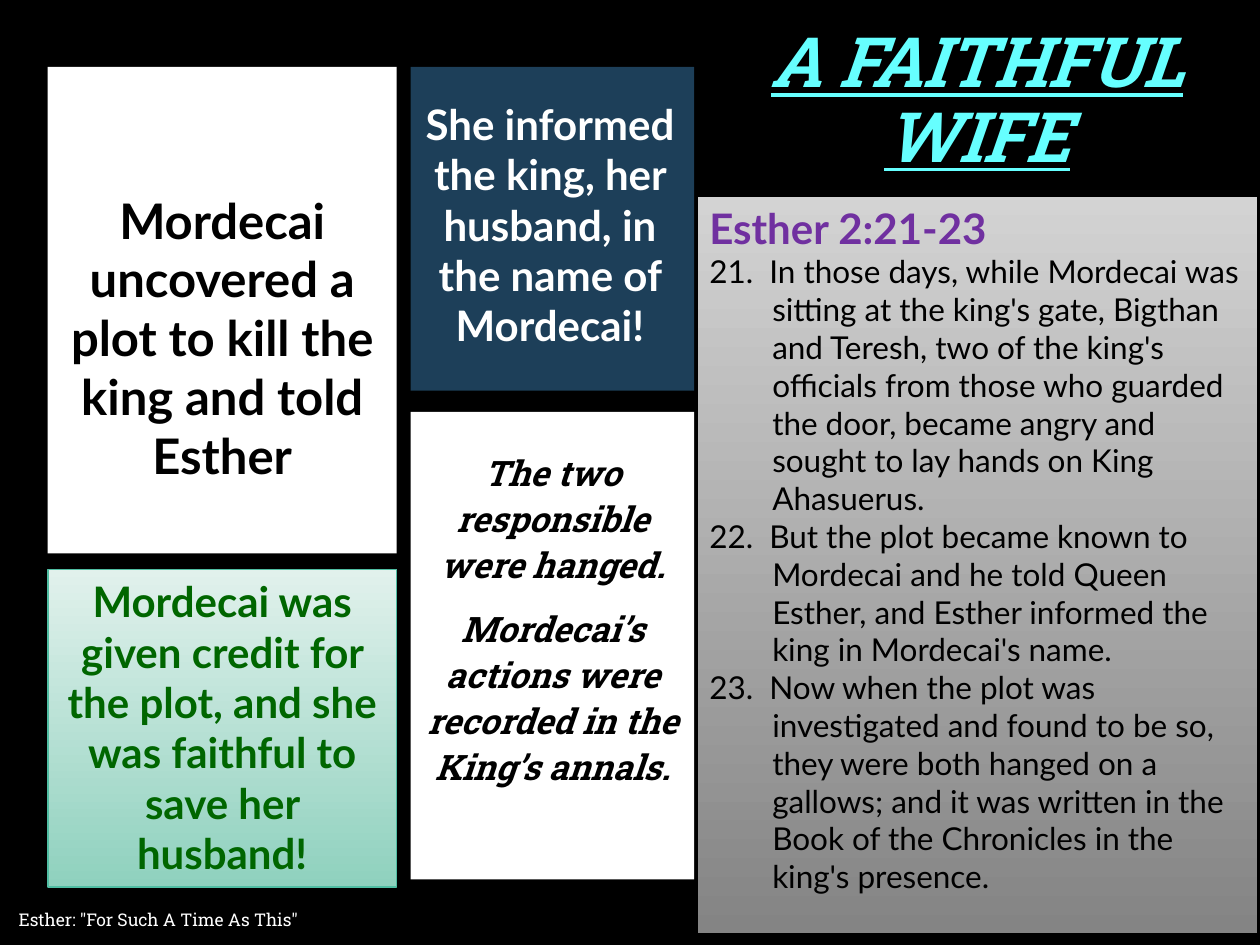
from lxml import etree
from pptx import Presentation
from pptx.dml.color import RGBColor
from pptx.enum.shapes import MSO_SHAPE
from pptx.enum.text import MSO_ANCHOR, MSO_AUTO_SIZE, PP_ALIGN
from pptx.oxml.ns import qn
from pptx.util import Pt

RECTANGLE = MSO_SHAPE.RECTANGLE
CENTER, LEFT = PP_ALIGN.CENTER, PP_ALIGN.LEFT
TOP, MIDDLE, BOTTOM = MSO_ANCHOR.TOP, MSO_ANCHOR.MIDDLE, MSO_ANCHOR.BOTTOM
GROW, FIXED = MSO_AUTO_SIZE.SHAPE_TO_FIT_TEXT, MSO_AUTO_SIZE.NONE

BLACK = RGBColor(0x00, 0x00, 0x00)
WHITE = RGBColor(0xFF, 0xFF, 0xFF)
CYAN = RGBColor(0x66, 0xFF, 0xFF)
BLUE = RGBColor(0x00, 0x00, 0xFF)
STEEL = RGBColor(0x2A, 0x5B, 0x7F)
NAVY = RGBColor(0x1F, 0x44, 0x5F)
PURPLE = RGBColor(0x70, 0x30, 0xA0)
GREEN = RGBColor(0x00, 0x66, 0x00)
TEAL = RGBColor(0x50, 0xBE, 0xA3)
MINT = (RGBColor(0xE1, 0xF1, 0xEC), RGBColor(0x8F, 0xD1, 0xBE))
GREY = (RGBColor(0xD3, 0xD3, 0xD3), RGBColor(0x84, 0x84, 0x84))

SANS, SLAB = "Lato", "Roboto Slab"

# Columns of the panel grid: left edge and width
LEFT_X, LEFT_WIDTH = 27.3, 199.4
MIDDLE_X, MIDDLE_WIDTH = 234.7, 162
PANEL_TOP = 38.2

VERSES = [
    "21.  In those days, while Mordecai was sitting at the king's gate, "
    "Bigthan and Teresh, two of the king's officials from those who guarded "
    "the door, became angry and sought to lay hands on King Ahasuerus.",
    "22.  But the plot became known to Mordecai and he told Queen Esther, "
    "and Esther informed the king in Mordecai's name.",
    "23.  Now when the plot was investigated and found to be so, they were "
    "both hanged on a gallows; and it was written in the Book of the "
    "Chronicles in the king's presence.",
]


def place(shape, left, top, width, height):
    shape.left, shape.top = Pt(left), Pt(top)
    shape.width, shape.height = Pt(width), Pt(height)


def prepare_frame(shape, anchor=TOP, auto_size=FIXED):
    frame = shape.text_frame
    frame.word_wrap = True
    frame.auto_size = auto_size
    frame.vertical_anchor = anchor
    return frame


def add_paragraph(frame, text, size, font_name, color, bold=False, italic=False,
                  align=CENTER, line_spacing=1.0, before=0, after=0, hanging=0):
    """Fill the empty first paragraph, or append one, and return its run."""
    paragraph = frame.paragraphs[0]
    if paragraph.runs:
        paragraph = frame.add_paragraph()
    paragraph.alignment = align
    paragraph.line_spacing = line_spacing
    paragraph.space_before, paragraph.space_after = Pt(before), Pt(after)
    if hanging:
        properties = paragraph._p.get_or_add_pPr()
        properties.set("marL", str(Pt(hanging)))
        properties.set("indent", str(-Pt(hanging)))
    run = paragraph.add_run()
    run.text = text
    font = run.font
    font.name, font.size = font_name, Pt(size)
    font.bold, font.italic = bold, italic
    font.color.rgb = color
    return run


def add_text_box(slide, left, top, width, height, anchor=TOP, auto_size=FIXED):
    box = slide.shapes.add_textbox(Pt(left), Pt(top), Pt(width), Pt(height))
    return prepare_frame(box, anchor, auto_size)


def add_rectangle(slide, left, top, width, height):
    shape = slide.shapes.add_shape(RECTANGLE, Pt(left), Pt(top), Pt(width), Pt(height))
    shape.shadow.inherit = False
    return shape


def add_panel(slide, left, top, width, height, color, opacity=100):
    panel = add_rectangle(slide, left, top, width, height)
    panel.fill.solid()
    panel.fill.fore_color.rgb = color
    panel.line.fill.background()
    if opacity < 100:
        color_element = panel._element.spPr.find(qn("a:solidFill"))[0]
        etree.SubElement(color_element, qn("a:alpha"), val=str(opacity * 1000))


def add_gradient_panel(slide, left, top, width, height, colors, line_color):
    panel = add_rectangle(slide, left, top, width, height)
    panel.fill.gradient()
    panel.fill.gradient_angle = 270  # from top to bottom
    for stop, color in zip(panel.fill.gradient_stops, colors):
        stop.color.rgb = color
    panel.line.color.rgb = line_color
    panel.line.width = Pt(1)
    return prepare_frame(panel, auto_size=GROW)


def outline_run(run, color, width):
    line = etree.Element(qn("a:ln"), w=str(Pt(width)))
    fill = etree.SubElement(line, qn("a:solidFill"))
    etree.SubElement(fill, qn("a:srgbClr"), val=str(color))
    run._r.get_or_add_rPr().insert(0, line)


def add_title(slide):
    title = slide.shapes.title
    place(title, 396.7, 3.6, 323.3, 101.5)
    run = add_paragraph(prepare_frame(title, BOTTOM), "A FAITHFUL WIFE", 39.6, SLAB,
                        CYAN, bold=True, italic=True, line_spacing=0.9)
    run.font.underline = True
    outline_run(run, BLUE, 0.75)


def main():
    presentation = Presentation()
    presentation.slide_width, presentation.slide_height = Pt(720), Pt(540)
    slide = presentation.slides.add_slide(presentation.slide_layouts[5])
    slide.background.fill.solid()
    slide.background.fill.fore_color.rgb = BLACK

    add_title(slide)

    # Plain panels and footer
    add_panel(slide, LEFT_X, PANEL_TOP, LEFT_WIDTH, 278, WHITE)
    add_panel(slide, MIDDLE_X, PANEL_TOP, MIDDLE_WIDTH, 185, STEEL, opacity=70)
    footer = add_text_box(slide, 3.6, 513.4, 393.8, 23.8, MIDDLE)
    add_paragraph(footer, 'Esther: "For Such A Time As This"', 10, SLAB, WHITE,
                  align=LEFT, after=6)
    add_panel(slide, LEFT_X, 328.3, LEFT_WIDTH, 174.2, NAVY, opacity=76)
    add_panel(slide, MIDDLE_X, 235.4, MIDDLE_WIDTH, 267.1, WHITE)

    # Panel captions
    plot = add_text_box(slide, LEFT_X, 105.1, LEFT_WIDTH, 177.1, auto_size=GROW)
    add_paragraph(plot, "Mordecai uncovered a plot to kill the king and told Esther",
                  28, SANS, BLACK, bold=True, after=6)
    outcome = add_text_box(slide, MIDDLE_X, 252, MIDDLE_WIDTH, 232.6)
    for text in ("The two responsible were hanged.",
                 "Mordecai’s actions were recorded in the King’s annals."):
        add_paragraph(outcome, text, 20, SLAB, BLACK, bold=True, italic=True,
                      line_spacing=1.1, before=10)
    informed = add_text_box(slide, 226.1, 52.6, 176.4, 152.6, auto_size=GROW)
    add_paragraph(informed, "She informed the king, her husband, in the name of Mordecai!",
                  24, SANS, WHITE, bold=True)

    # Scripture passage
    passage = add_gradient_panel(slide, 398.2, 111.9, 320.4, 421.9, GREY, BLACK)
    add_paragraph(passage, "Esther 2:21-23", 24, SANS, PURPLE, bold=True,
                  align=LEFT, hanging=36)
    for verse in VERSES:
        add_paragraph(passage, verse, 18, SANS, BLACK, align=LEFT, hanging=36)

    # Conclusion
    credit = add_gradient_panel(slide, LEFT_X, 325.4, LEFT_WIDTH, 181.4, MINT, TEAL)
    add_paragraph(credit, "Mordecai was given credit for the plot, and she was "
                  "faithful to save her husband!", 24, SANS, GREEN, bold=True)

    presentation.save("out.pptx")


if __name__ == "__main__":
    main()
